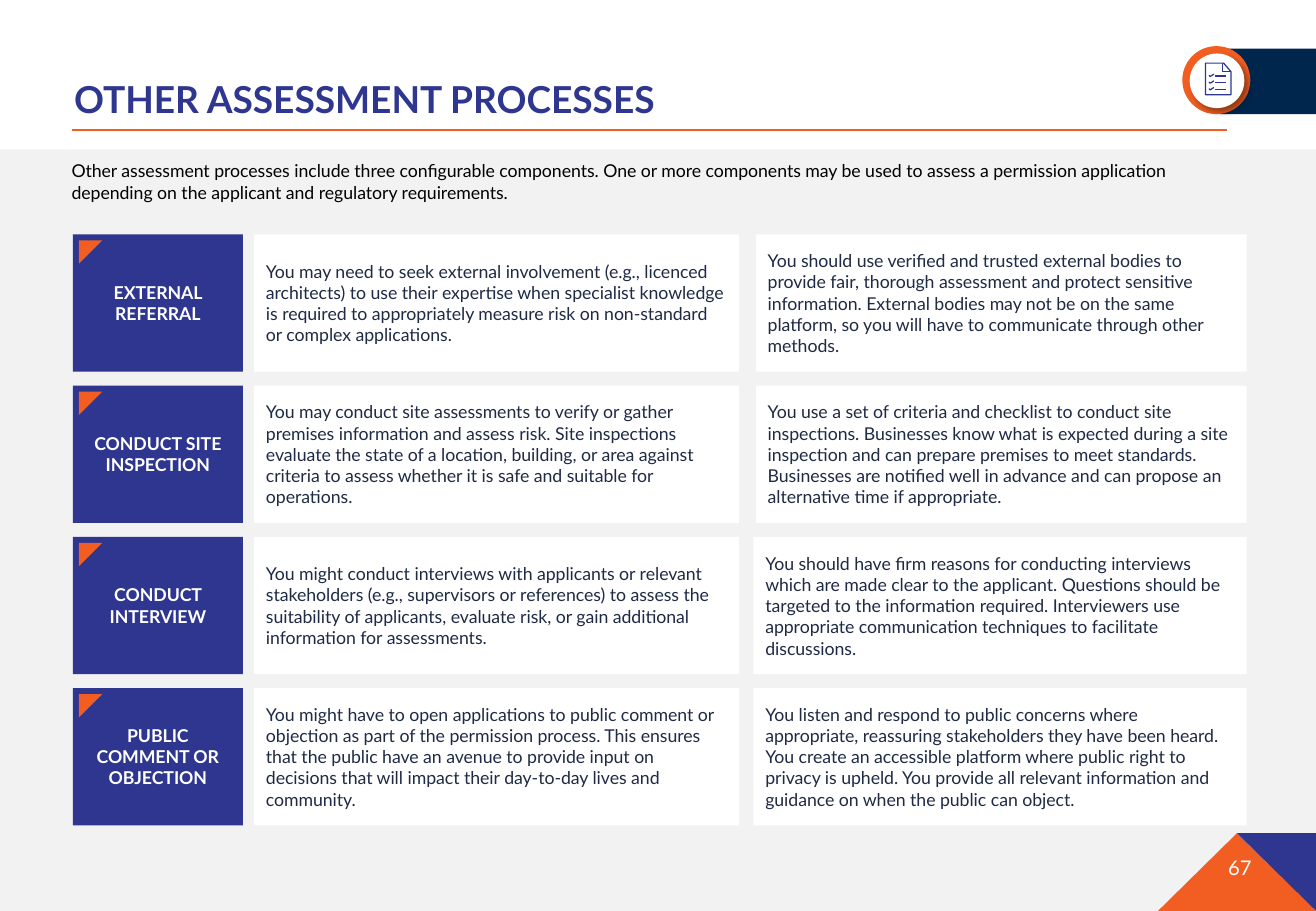
"""Build the slide on other assessment processes."""
from lxml import etree
from pptx import Presentation
from pptx.dml.color import RGBColor
from pptx.enum.shapes import MSO_CONNECTOR, MSO_SHAPE
from pptx.enum.text import MSO_ANCHOR, PP_ALIGN
from pptx.oxml.ns import qn
from pptx.util import Inches, Pt

RECTANGLE, OVAL, RIGHT_TRIANGLE = MSO_SHAPE.RECTANGLE, MSO_SHAPE.OVAL, MSO_SHAPE.RIGHT_TRIANGLE
STRAIGHT = MSO_CONNECTOR.STRAIGHT
TOP, MIDDLE = MSO_ANCHOR.TOP, MSO_ANCHOR.MIDDLE
LEFT, CENTER, RIGHT = PP_ALIGN.LEFT, PP_ALIGN.CENTER, PP_ALIGN.RIGHT

FONT = "Lato"
BLUE, ORANGE, NAVY = "2E368F", "F25E21", "00264D"
WHITE, GRAY, BLACK, INK = "FFFFFF", "F2F2F2", "000000", "1F2A44"
SLIDE_WIDTH, SLIDE_HEIGHT = 10.83, 7.5

TITLE = "OTHER ASSESSMENT PROCESSES"
INTRO = (
    "Other assessment processes include three configurable components. One or more components "
    "may be used to assess a permission application depending on the applicant and regulatory "
    "requirements."
)
PAGE_NUMBER = "67"
PROCESSES = [
    (
        "EXTERNAL REFERRAL",
        "You may need to seek external involvement (e.g., licenced architects) to use their "
        "expertise when specialist knowledge is required to appropriately measure risk on "
        "non-standard or complex applications.",
        "You should use verified and trusted external bodies to provide fair, thorough assessment "
        "and protect sensitive information. External bodies may not be on the same platform, so "
        "you will have to communicate through other methods.",
    ),
    (
        "CONDUCT SITE INSPECTION",
        "You may conduct site assessments to verify or gather premises information and assess "
        "risk. Site inspections evaluate the state of a location, building, or area against "
        "criteria to assess whether it is safe and suitable for operations.",
        "You use a set of criteria and checklist to conduct site inspections. Businesses know "
        "what is expected during a site inspection and can prepare premises to meet standards. "
        "Businesses are notified well in advance and can propose an alternative time if "
        "appropriate.",
    ),
    (
        "CONDUCT INTERVIEW",
        "You might conduct interviews with applicants or relevant stakeholders (e.g., supervisors "
        "or references) to assess the suitability of applicants, evaluate risk, or gain "
        "additional information for assessments.",
        "You should have firm reasons for conducting interviews which are made clear to the "
        "applicant. Questions should be targeted to the information required. Interviewers use "
        "appropriate communication techniques to facilitate discussions.",
    ),
    (
        "PUBLIC COMMENT OR OBJECTION",
        "You might have to open applications to public comment or objection as part of the "
        "permission process. This ensures that the public have an avenue to provide input on "
        "decisions that will impact their day-to-day lives and community.",
        "You listen and respond to public concerns where appropriate, reassuring stakeholders "
        "they have been heard. You create an accessible platform where public right to privacy "
        "is upheld. You provide all relevant information and guidance on when the public can "
        "object.",
    ),
]
DETAIL_LEFTS = [6.22, 6.22, 6.2, 6.2]
DETAIL_RIGHT = 10.26
FIRST_ROW, ROW_HEIGHT, ROW_GAP = 1.93, 1.13, 0.115

CORNER_TRIANGLES = [
    (ORANGE, [(10.18, 6.86), (9.53, 7.5), (10.83, 7.5)]),
    (BLUE, [(10.18, 6.86), (10.83, 6.86), (10.83, 7.5)]),
]
PAGE_OUTLINE = [(10.07, 0.52), (9.92, 0.52), (9.92, 0.78), (10.13, 0.78), (10.13, 0.59)]
PAGE_FOLD = [(10.06, 0.52), (10.06, 0.59), (10.13, 0.59)]
CHECK_MARK = [(9.95, 0.62), (9.96, 0.63), (9.99, 0.61)]
CHECK_STEP = 0.055


def color(value):
    return RGBColor.from_string(value)


def write(shape, text, size, text_color, bold=False, align=LEFT, anchor=TOP, side_inset=0.1):
    frame = shape.text_frame
    frame.text = text
    frame.word_wrap = True
    frame.vertical_anchor = anchor
    frame.margin_left = frame.margin_right = Inches(side_inset)
    frame.margin_top = frame.margin_bottom = Inches(0.05)
    paragraph = frame.paragraphs[0]
    paragraph.alignment = align
    font = paragraph.runs[0].font
    font.name, font.size, font.bold = FONT, Pt(size), bold
    font.color.rgb = color(text_color)
    return paragraph


def add_block(shapes, kind, box, fill):
    shape = shapes.add_shape(kind, *map(Inches, box))
    shape.shadow.inherit = False
    shape.fill.solid()
    shape.fill.fore_color.rgb = color(fill)
    shape.line.fill.background()
    return shape


def add_text(shapes, box, *content, **style):
    write(shapes.add_textbox(*map(Inches, box)), *content, **style)


def add_outline(shapes, points, close=False, fill=None):
    corners = [(Inches(x), Inches(y)) for x, y in points]
    builder = shapes.build_freeform(*corners[0])
    builder.add_line_segments(corners[1:], close=close)
    shape = builder.convert_to_shape()
    shape.shadow.inherit = False
    if fill:
        shape.fill.solid()
        shape.fill.fore_color.rgb = color(fill)
        shape.line.fill.background()
    else:
        shape.fill.background()
        shape.line.color.rgb = color(BLUE)
        shape.line.width = Pt(0.75)


def add_line(shapes, start, end, line_color, width):
    line = shapes.add_connector(STRAIGHT, *map(Inches, start + end))
    line.line.color.rgb = color(line_color)
    line.line.width = Pt(width)
    etree.SubElement(line._element.spPr, qn("a:effectLst"))


def add_shadow(shape):
    effects = shape._element.spPr.find(qn("a:effectLst"))
    shadow = etree.SubElement(
        effects, qn("a:outerShdw"), blurRad=str(Pt(4)), dist=str(Pt(3)), dir="2700000"
    )
    shade = etree.SubElement(shadow, qn("a:srgbClr"), val=BLACK)
    etree.SubElement(shade, qn("a:alpha"), val="40000")


def add_badge(shapes):
    add_block(shapes, RECTANGLE, (10.04, 0.4, 0.79, 0.54), NAVY)
    add_block(shapes, OVAL, (9.73, 0.38, 0.56, 0.56), ORANGE)
    add_shadow(add_block(shapes, OVAL, (9.79, 0.44, 0.45, 0.45), WHITE))
    add_outline(shapes, PAGE_OUTLINE, close=True)
    add_outline(shapes, PAGE_FOLD)
    for index in range(3):
        drop = index * CHECK_STEP
        add_outline(shapes, [(x, y + drop) for x, y in CHECK_MARK])
        add_line(shapes, (10, 0.625 + drop), (10.09, 0.625 + drop), BLUE, 0.75)


def add_process(shapes, index, label, purpose, detail):
    top = FIRST_ROW + index * (ROW_HEIGHT + ROW_GAP)
    left = DETAIL_LEFTS[index]
    label_block = add_block(shapes, RECTANGLE, (0.6, top, 1.4, ROW_HEIGHT), BLUE)
    write(label_block, label, 10.5, WHITE, bold=True, align=CENTER, anchor=MIDDLE, side_inset=0.08)
    for text, x, width in ((purpose, 2.09, 3.99), (detail, left, DETAIL_RIGHT - left)):
        block = add_block(shapes, RECTANGLE, (x, top, width, ROW_HEIGHT), WHITE)
        write(block, text, 10.5, INK, anchor=MIDDLE)
    marker = add_block(shapes, RIGHT_TRIANGLE, (0.65, top + 0.05, 0.19, 0.19), ORANGE)
    marker.rotation = 90


def main():
    presentation = Presentation()
    presentation.slide_width = Inches(SLIDE_WIDTH)
    presentation.slide_height = Inches(SLIDE_HEIGHT)
    slide = presentation.slides.add_slide(presentation.slide_layouts[5])
    shapes = slide.shapes

    title = shapes.title
    title.left, title.top, title.width, title.height = map(Inches, (0.61, 0.62, 9.65, 0.57))
    write(title, TITLE, 22, BLUE, bold=True, side_inset=0).line_spacing = 0.9

    add_block(shapes, RECTANGLE, (0, 1.23, SLIDE_WIDTH, SLIDE_HEIGHT - 1.23), GRAY)
    for fill, points in CORNER_TRIANGLES:
        add_outline(shapes, points, close=True, fill=fill)
    add_text(shapes, (9.43, 6.99, 0.87, 0.3), PAGE_NUMBER, 12, WHITE, align=RIGHT, side_inset=0)
    add_line(shapes, (0.59, 1.07), (10.1, 1.07), ORANGE, 1.25)
    add_badge(shapes)
    add_text(shapes, (0.49, 1.27, 9.61, 0.47), INTRO, 10.5, BLACK)
    for index, process in enumerate(PROCESSES):
        add_process(shapes, index, *process)
    presentation.save("out.pptx")


if __name__ == "__main__":
    main()
